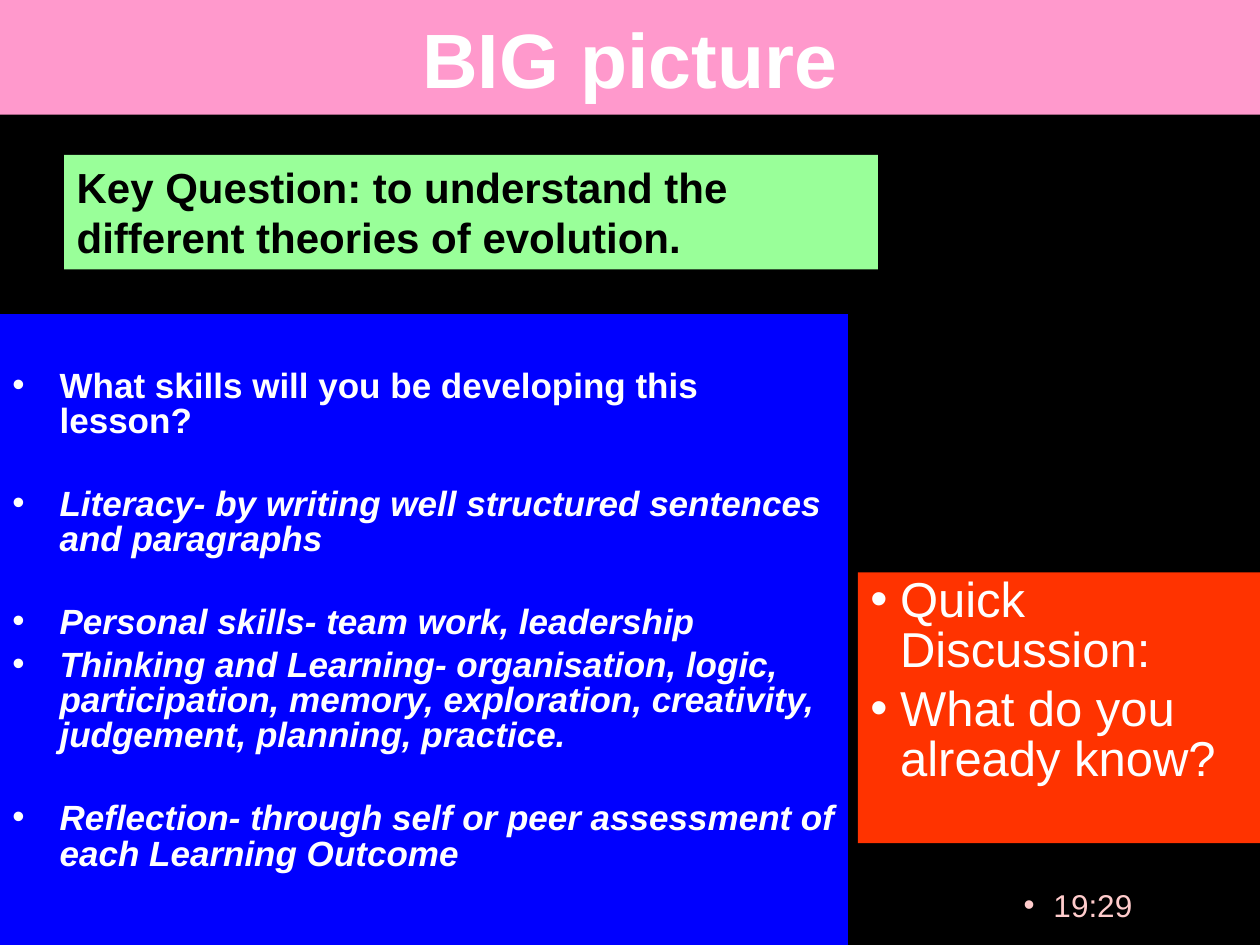
from lxml.etree import SubElement
from pptx import Presentation
from pptx.dml.color import RGBColor
from pptx.enum.shapes import MSO_SHAPE
from pptx.enum.text import MSO_ANCHOR, PP_ALIGN
from pptx.oxml.ns import qn
from pptx.util import Pt


def color(code):
    return RGBColor.from_string(code)


class Page:
    font = "Arial"
    white = "FFFFFF"
    tight = 0.84

    def __init__(self, deck):
        self.slide = deck.slides.add_slide(deck.slide_layouts[6])
        fill = self.slide.background.fill
        fill.solid()
        fill.fore_color.rgb = color("000000")

    def panel(self, area, fill, top=3.6):
        """Add a filled block and return its empty text frame."""
        shape = self.slide.shapes.add_shape(
            MSO_SHAPE.RECTANGLE, *[Pt(n) for n in area])
        shape.shadow.inherit = False
        shape.fill.solid()
        shape.fill.fore_color.rgb = color(fill)
        shape.line.fill.background()
        return self.setup(shape.text_frame, top)

    def label(self, area):
        """Add a text box and return its empty text frame."""
        box = self.slide.shapes.add_textbox(*[Pt(n) for n in area])
        return self.setup(box.text_frame)

    def setup(self, frame, top=3.6):
        frame.word_wrap = True
        frame.vertical_anchor = MSO_ANCHOR.TOP
        frame.margin_top = Pt(top)
        return frame

    def letter(self, para, text, size, ink=white, bold=False,
               slant=False, align=PP_ALIGN.LEFT):
        """Set the text of a paragraph and format its runs."""
        para.text = text
        para.alignment = align
        for run in para.runs:
            font = run.font
            font.name = self.font
            font.size = Pt(size)
            font.bold = bold
            font.italic = slant
            font.color.rgb = color(ink)

    def bullet(self, para, indent):
        props = para._p.get_or_add_pPr()
        props.set("marL", str(Pt(indent)))
        props.set("indent", str(-Pt(indent)))
        SubElement(props, qn("a:buFont")).set("typeface", self.font)
        SubElement(props, qn("a:buChar")).set("char", "•")

    def points(self, frame, items, size, indent, **style):
        """Fill a frame with bullets from (text, space before, slant) items."""
        for num, (text, gap, slant) in enumerate(items):
            para = frame.add_paragraph() if num else frame.paragraphs[0]
            self.bullet(para, indent)
            self.letter(para, text, size, slant=slant, **style)
            para.line_spacing = self.tight
            if num:
                para.space_before = Pt(gap)


def main():
    deck = Presentation()
    deck.slide_width, deck.slide_height = Pt(720), Pt(540)
    page = Page(deck)

    time = page.label((564.5, 502.5, 113, 37.5))
    time.margin_right = Pt(17)
    page.bullet(time.paragraphs[0], 17)
    page.letter(time.paragraphs[0], "19:29", 18, "FFCCCC",
                align=PP_ALIGN.CENTER)

    title = page.panel((0, 0, 720, 65.5), "FF99CC")
    title.vertical_anchor = MSO_ANCHOR.MIDDLE
    page.letter(title.paragraphs[0], "BIG picture", 44, bold=True,
                align=PP_ALIGN.CENTER)

    near, far = 4, 27.3
    skills = page.panel((0, 179.5, 484.5, 360.5), "0000FF", top=32)
    page.points(skills, [
        ("What skills will you be developing this lesson?", 0, False),
        ("Literacy- by writing well structured sentences and paragraphs",
         far, True),
        ("Personal skills- team work, leadership", far, True),
        ("Thinking and Learning- organisation, logic, participation, memory, "
         "exploration, creativity, judgement, planning, practice.",
         near, True),
        ("Reflection- through self or peer assessment of each Learning "
         "Outcome", far, True),
    ], 20, 27, bold=True)

    key = page.panel((36.75, 88.5, 465, 65.5), "99FF99")
    page.letter(key.paragraphs[0], "Key Question: to understand the different "
                "theories of evolution.", 24, "000000", bold=True)

    quick = page.panel((490.25, 327, 229.75, 154.75), "FF3300")
    page.points(quick, [
        ("Quick Discussion:", 0, False),
        ("What do you already know?", 5.6, False),
    ], 28, 17)

    deck.save("out.pptx")


if __name__ == "__main__":
    main()
